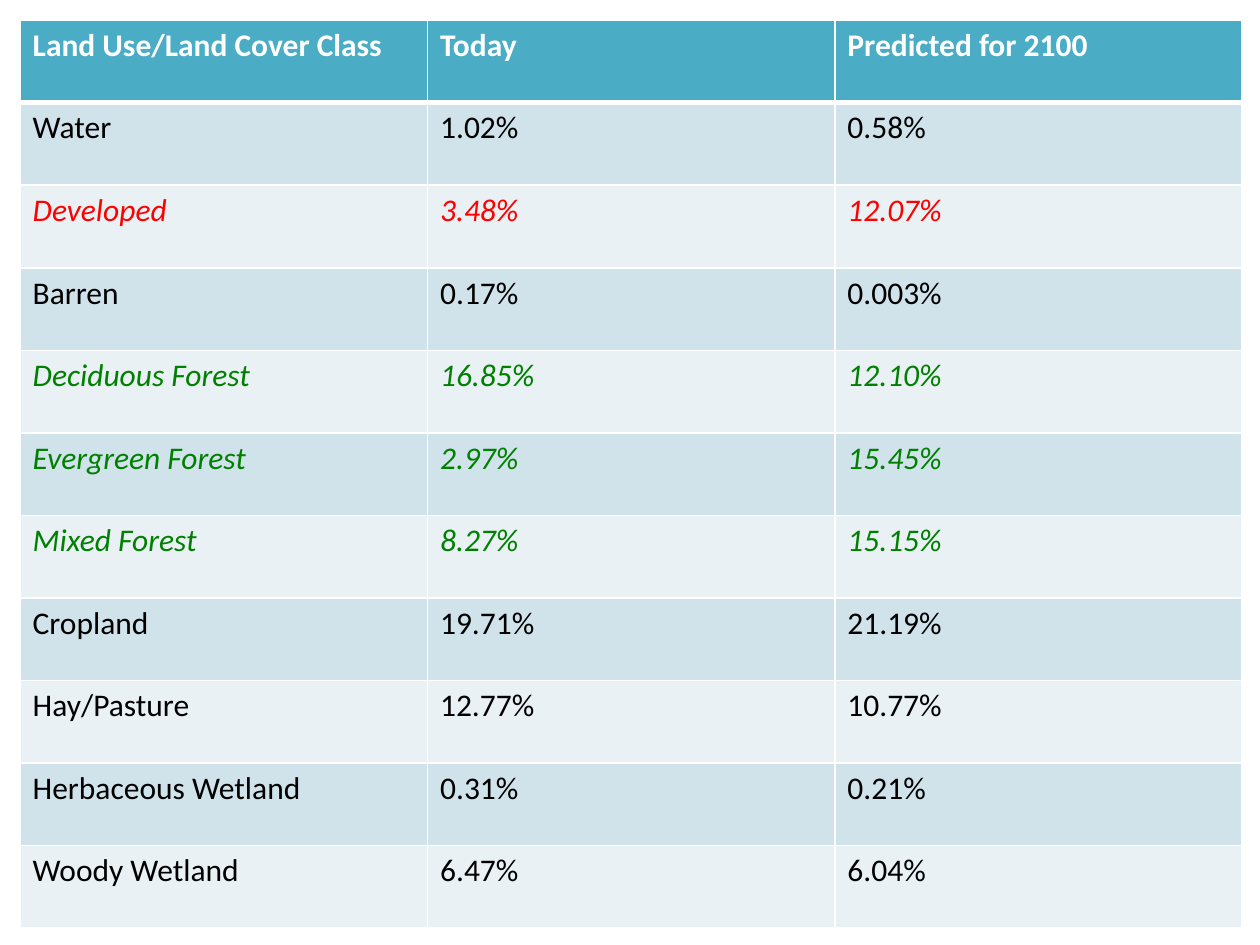
from lxml import etree
from pptx import Presentation
from pptx.dml.color import RGBColor
from pptx.oxml.ns import qn
from pptx.util import Inches, Pt

COLORS = {
    "header": "4BACC6",
    "band_dark": "D0E3EA",
    "band_light": "E9F1F5",
    "white": "FFFFFF",
    "plain": "000000",
    "growth": "FF0000",
    "forest": "008000",
}
FONT = "Calibri"
BLANK_LAYOUT = 6
MARGIN = 0.16
TABLE_WIDTH, TABLE_HEIGHT = 9.7, 7.21
HEADINGS = ("Land Use/Land Cover Class", "Today", "Predicted for 2100")
LAND_CLASSES = [
    ("Water", "1.02%", "0.58%"),
    ("Developed", "3.48%", "12.07%"),
    ("Barren", "0.17%", "0.003%"),
    ("Deciduous Forest", "16.85%", "12.10%"),
    ("Evergreen Forest", "2.97%", "15.45%"),
    ("Mixed Forest", "8.27%", "15.15%"),
    ("Cropland", "19.71%", "21.19%"),
    ("Hay/Pasture", "12.77%", "10.77%"),
    ("Herbaceous Wetland", "0.31%", "0.21%"),
    ("Woody Wetland", "6.47%", "6.04%"),
]


def rgb(name):
    return RGBColor.from_string(COLORS[name])


def set_borders(cell, top, bottom):
    properties = cell._tc.get_or_add_tcPr()
    for side, width in (("L", 1), ("R", 1), ("T", top), ("B", bottom)):
        border = etree.SubElement(properties, qn(f"a:ln{side}"), w=str(Pt(width)))
        solid = etree.SubElement(border, qn("a:solidFill"))
        etree.SubElement(solid, qn("a:srgbClr"), val=COLORS["white"])


def fill_row(row, values, fill, color, bold=False, italic=False, top=1, bottom=1):
    for cell, value in zip(row.cells, values):
        set_borders(cell, top, bottom)
        cell.fill.solid()
        cell.fill.fore_color.rgb = rgb(fill)
        cell.text_frame.text = value
        font = cell.text_frame.paragraphs[0].runs[0].font
        font.name, font.size = FONT, Pt(18)
        font.bold, font.italic = bold, italic
        font.color.rgb = rgb(color)


def class_color(land_class):
    if land_class.endswith("Forest"):
        return "forest"
    return "growth" if land_class == "Developed" else "plain"


def add_land_table(slide):
    row_count, column_count = len(LAND_CLASSES) + 1, len(HEADINGS)
    land_table = slide.shapes.add_table(
        row_count, column_count, Inches(MARGIN), Inches(MARGIN),
        Inches(TABLE_WIDTH), Inches(TABLE_HEIGHT),
    ).table
    for column in land_table.columns:
        column.width = Inches(TABLE_WIDTH / column_count)
    for row in land_table.rows:
        row.height = Inches(TABLE_HEIGHT / row_count)

    fill_row(land_table.rows[0], HEADINGS, "header", "white", bold=True, bottom=3)
    for index, values in enumerate(LAND_CLASSES):
        color = class_color(values[0])
        fill_row(
            land_table.rows[index + 1], values,
            "band_light" if index % 2 else "band_dark", color,
            italic=color != "plain", top=1 if index else 3,
        )


def main():
    presentation = Presentation()
    presentation.slide_width, presentation.slide_height = Inches(10), Inches(7.5)
    slide = presentation.slides.add_slide(presentation.slide_layouts[BLANK_LAYOUT])
    add_land_table(slide)
    presentation.save("out.pptx")


if __name__ == "__main__":
    main()
